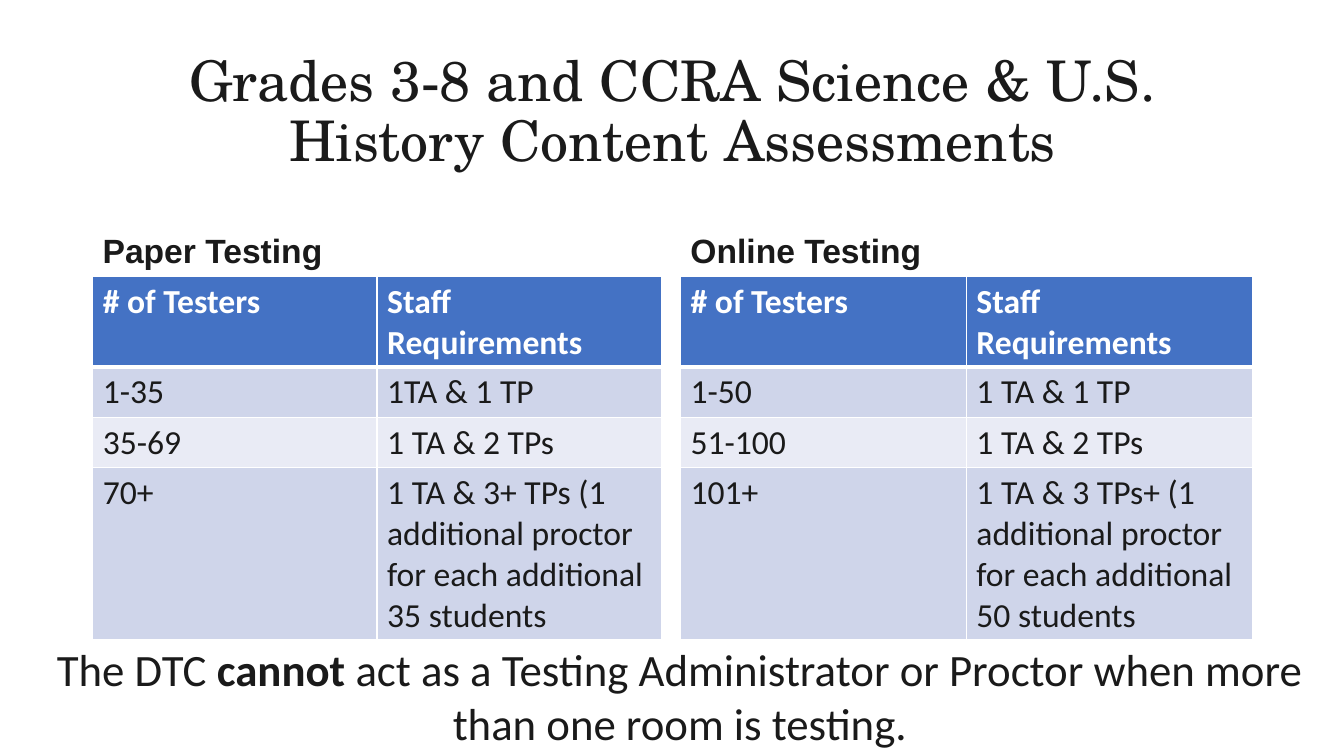
"""Build a slide of staffing needs for paper and online testing."""
from lxml import etree
from pptx import Presentation
from pptx.dml.color import RGBColor
from pptx.enum import text as txt
from pptx.oxml import ns
from pptx.util import Inches, Pt

TITLE = "Grades 3-8 and CCRA Science & U.S. History Content Assessments"
HEAD = ("# of Testers", "Staff Requirements")
GROUPS = [
    ("Paper Testing", 0.92, 5.64, [
        HEAD,
        ("1-35", "1TA & 1 TP"),
        ("35-69", "1 TA & 2 TPs"),
        ("70+", "1 TA & 3+ TPs (1 additional proctor for each additional 35 students"),
    ]),
    ("Online Testing", 6.75, 5.67, [
        HEAD,
        ("1-50", "1 TA & 1 TP"),
        ("51-100", "1 TA & 2 TPs"),
        ("101+", "1 TA & 3 TPs+ (1 additional proctor for each additional 50 students"),
    ]),
]
NOTE = [("The DTC ", False), ("cannot", True),
        (" act as a Testing Administrator or Proctor when more than one room is testing.", False)]
COLORS = {"ink": "1A1A1A", "white": "FFFFFF", "head": "4472C4", "odd": "CFD5EA", "even": "E9EBF5"}
HEIGHTS = (0.9, 0.5, 0.5, 1.7)
TOP = 2.74


def write(frame, runs, size=24, font="Calibri", color="ink", bold=False,
          align="LEFT", anchor="TOP", line=None):
    frame.word_wrap = True
    frame.vertical_anchor = txt.MSO_ANCHOR[anchor]
    para = frame.paragraphs[0]
    para.alignment = txt.PP_ALIGN[align]
    if line:
        para.line_spacing = line
    for words, strong in [(runs, bold)] if isinstance(runs, str) else runs:
        run = para.add_run()
        run.text = words
        run.font.name, run.font.size, run.font.bold = font, Pt(size), strong
        run.font.color.rgb = RGBColor.from_string(COLORS[color])


def add_box(slide, runs, *place, **look):
    box = slide.shapes.add_textbox(*map(Inches, place))
    write(box.text_frame, runs, **look)


def edge(cell, side, width):
    line = etree.SubElement(cell._tc.get_or_add_tcPr(), ns.qn("a:ln" + side), w=str(Pt(width)))
    fill = etree.SubElement(line, ns.qn("a:solidFill"))
    etree.SubElement(fill, ns.qn("a:srgbClr"), val=COLORS["white"])


def add_grid(slide, rows, left, width):
    place = map(Inches, (left, TOP, width, sum(HEIGHTS)))
    grid = slide.shapes.add_table(len(rows), len(HEAD), *place).table
    for r, row in enumerate(rows):
        grid.rows[r].height = Inches(HEIGHTS[r])
        for c, words in enumerate(row):
            cell = grid.cell(r, c)
            for side in "LRTB":
                thick = (r, side) in ((0, "B"), (1, "T"))
                edge(cell, side, 3 if thick else 1)
            cell.fill.solid()
            shade = "head" if r == 0 else "odd" if r % 2 else "even"
            cell.fill.fore_color.rgb = RGBColor.from_string(COLORS[shade])
            write(cell.text_frame, words, color="ink" if r else "white", bold=r == 0)


def main():
    deck = Presentation()
    deck.slide_width, deck.slide_height = Inches(13.33), Inches(7.5)
    slide = deck.slides.add_slide(deck.slide_layouts[6])
    add_box(slide, TITLE, 0.92, 0.4, 11.5, 1.45, size=40, font="TeX Gyre Schola",
            align="CENTER", anchor="MIDDLE", line=0.9)
    for name, left, width, rows in GROUPS:
        add_box(slide, name, left, TOP - 0.9, width, 0.9, font="Arial", bold=True,
                anchor="BOTTOM", line=0.9)
        add_grid(slide, rows, left, width)
    add_box(slide, NOTE, 0.42, 6.32, 12.65, 1.18, size=32, align="CENTER")
    deck.save("out.pptx")


if __name__ == "__main__":
    main()
